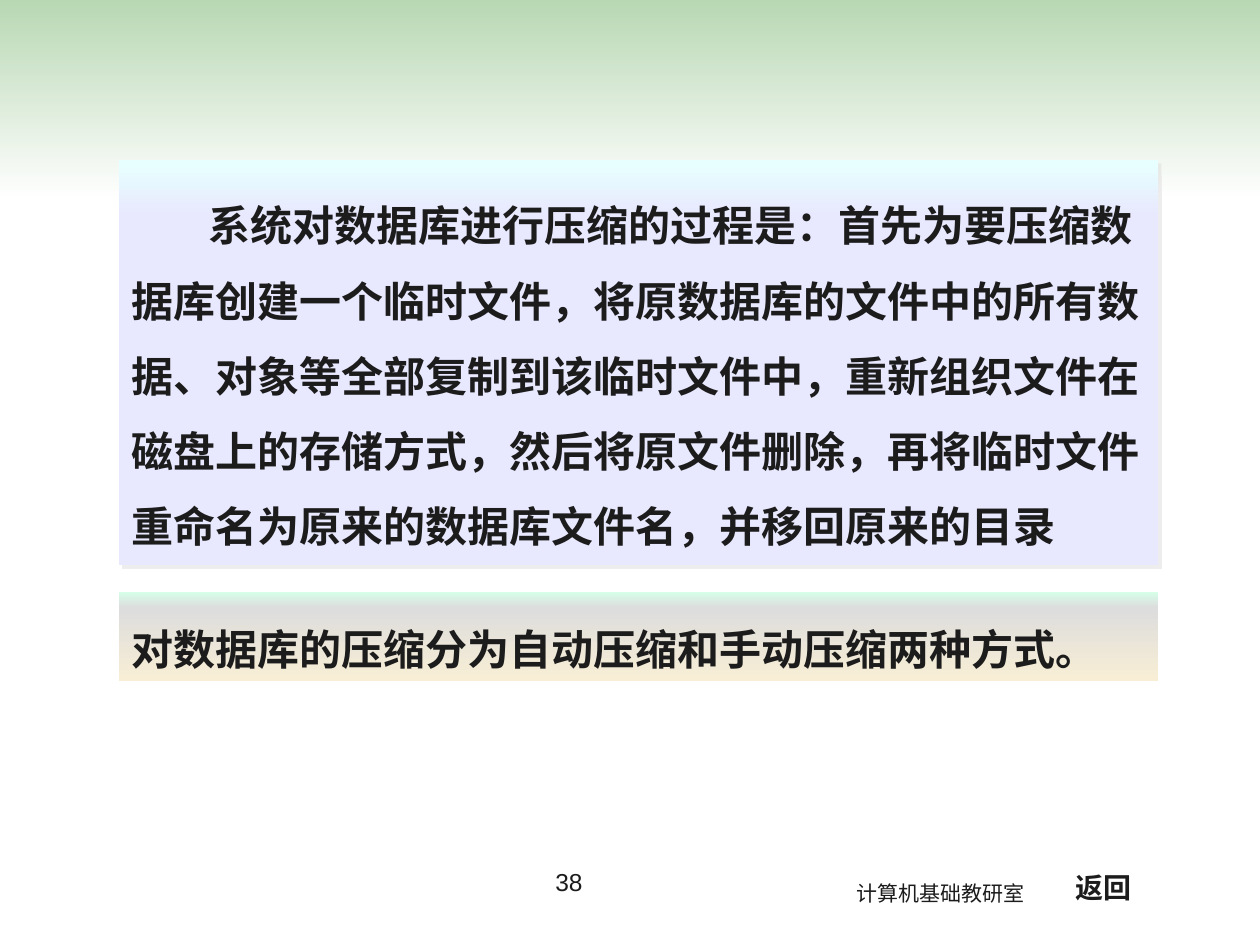
from dataclasses import dataclass

from lxml import etree
from pptx import Presentation
from pptx.dml.color import RGBColor
from pptx.enum.shapes import MSO_SHAPE
from pptx.enum.text import MSO_ANCHOR, PP_ALIGN
from pptx.oxml.ns import qn
from pptx.util import Emu, Pt

RECT = MSO_SHAPE.RECTANGLE
TOP = MSO_ANCHOR.TOP
LEFT, MID = PP_ALIGN.LEFT, PP_ALIGN.CENTER
SCALE = 914400 / 126
BODY = ("系统对数据库进行压缩的过程是：首先为要压缩数据库创建一个临时文件，"
        "将原数据库的文件中的所有数据、对象等全部复制到该临时文件中，"
        "重新组织文件在磁盘上的存储方式，然后将原文件删除，"
        "再将临时文件重命名为原来的数据库文件名，并移回原来的目录")
MODES = "对数据库的压缩分为自动压缩和手动压缩两种方式。"


@dataclass(frozen=True)
class Theme:
    """Colours, fonts and type sizes of the slide."""
    ink: str = "1C1C1C"
    shade: str = "DDDDDD"
    band: tuple = ((0, "4E9D41"), (100, "FFFFFF"))
    sky: tuple = ((1, "E7FFFF"), (14, "E8E8FE"), (99, "E8E8FE"))
    sand: tuple = ((0, "D6FEE9"), (18, "DDDDDD"), (100, "F8EED5"))
    latin: str = "Arial"
    asian: str = "Noto Sans CJK JP"
    main: int = 24
    link: int = 16
    page: int = 14
    foot: int = 12
    pitch: int = 43


@dataclass(frozen=True)
class Box:
    """A place on the slide in px."""
    x: int
    y: int
    w: int
    h: int


THEME = Theme()


def px(num: int) -> Emu:
    """Turn px into EMU."""
    return Emu(round(num * SCALE))


def spot(box: Box) -> tuple:
    """Give the four lengths of a box in EMU."""
    return px(box.x), px(box.y), px(box.w), px(box.h)


def tint(host, name: str, code: str, alpha: int, **attrs) -> None:
    """Add an element that holds one colour."""
    node = etree.SubElement(host, qn(name), **attrs)
    tone = etree.SubElement(node, qn("a:srgbClr"), val=code)
    if alpha < 100:
        etree.SubElement(tone, qn("a:alpha"), val=str(alpha * 1000))


def blend(shape, stops: tuple, alpha: int) -> None:
    """Fill a shape with a gradient running down."""
    shape.fill.background()
    grad = etree.Element(qn("a:gradFill"), rotWithShape="1")
    row = etree.SubElement(grad, qn("a:gsLst"))
    for pos, code in stops:
        tint(row, "a:gs", code, alpha, pos=str(pos * 1000))
    etree.SubElement(grad, qn("a:lin"), ang="5400000", scaled="0")
    props = shape.element.spPr
    props.replace(props.find(qn("a:noFill")), grad)


def panel(slide, box: Box, stops: tuple, alpha: int = 100, cast: bool = False):
    """Draw a gradient rectangle, with a soft shadow if asked."""
    shape = slide.shapes.add_shape(RECT, *spot(box))
    shape.line.fill.background()
    shape.shadow.inherit = False
    blend(shape, stops, alpha)
    if cast:
        list_ = shape.element.spPr.find(qn("a:effectLst"))
        tint(list_, "a:outerShdw", THEME.shade, 50, dist="35560",
             dir="2700000", algn="ctr", rotWithShape="0")
    return shape


def write(shape, text: str, *, size: int, bold: bool = False, align=LEFT,
          font: str = THEME.latin, inset: int = 6, dent: int = 0,
          pitch: int = 0) -> None:
    """Put formatted text into a shape."""
    frame = shape.text_frame
    frame.word_wrap = True
    frame.vertical_anchor = TOP
    frame.margin_top = px(inset)
    para = frame.paragraphs[0]
    para.alignment = align
    if pitch:
        para.line_spacing = Pt(pitch)
    if dent:
        para._p.get_or_add_pPr().set("indent", str(px(dent)))
    run = para.add_run()
    run.text = text
    face = run.font
    face.size, face.bold, face.name = Pt(size), bold, font
    face.color.rgb = RGBColor.from_string(THEME.ink)
    props = run._r.get_or_add_rPr()
    props.set("lang", "zh-CN")
    east = etree.Element(qn("a:ea"), typeface=THEME.asian)
    props.find(qn("a:latin")).addnext(east)


def label(slide, box: Box, text: str, **form) -> None:
    """Add a text box."""
    write(slide.shapes.add_textbox(*spot(box)), text, **form)


def main() -> None:
    """Build the slide and save it."""
    deck = Presentation()
    deck.slide_width, deck.slide_height = px(1260), px(945)
    slide = deck.slides.add_slide(deck.slide_layouts[6])
    panel(slide, Box(0, 0, 1260, 198), THEME.band, alpha=40)
    label(slide, Box(844, 874, 215, 38), "计算机基础教研室",
          size=THEME.foot, font=THEME.asian, inset=7)
    label(slide, Box(1048, 864, 111, 47), "返回",
          size=THEME.link, bold=True, align=MID, inset=7)
    body = panel(slide, Box(119, 160, 1039, 405), THEME.sky, cast=True)
    write(body, BODY, size=THEME.main, bold=True, inset=15, dent=77,
          pitch=THEME.pitch)
    label(slide, Box(422, 861, 294, 65), "38", size=THEME.page, align=MID)
    modes = panel(slide, Box(119, 592, 1039, 89), THEME.sand)
    write(modes, MODES, size=THEME.main, bold=True, inset=7,
          pitch=THEME.pitch)
    deck.save("out.pptx")


if __name__ == "__main__":
    main()
